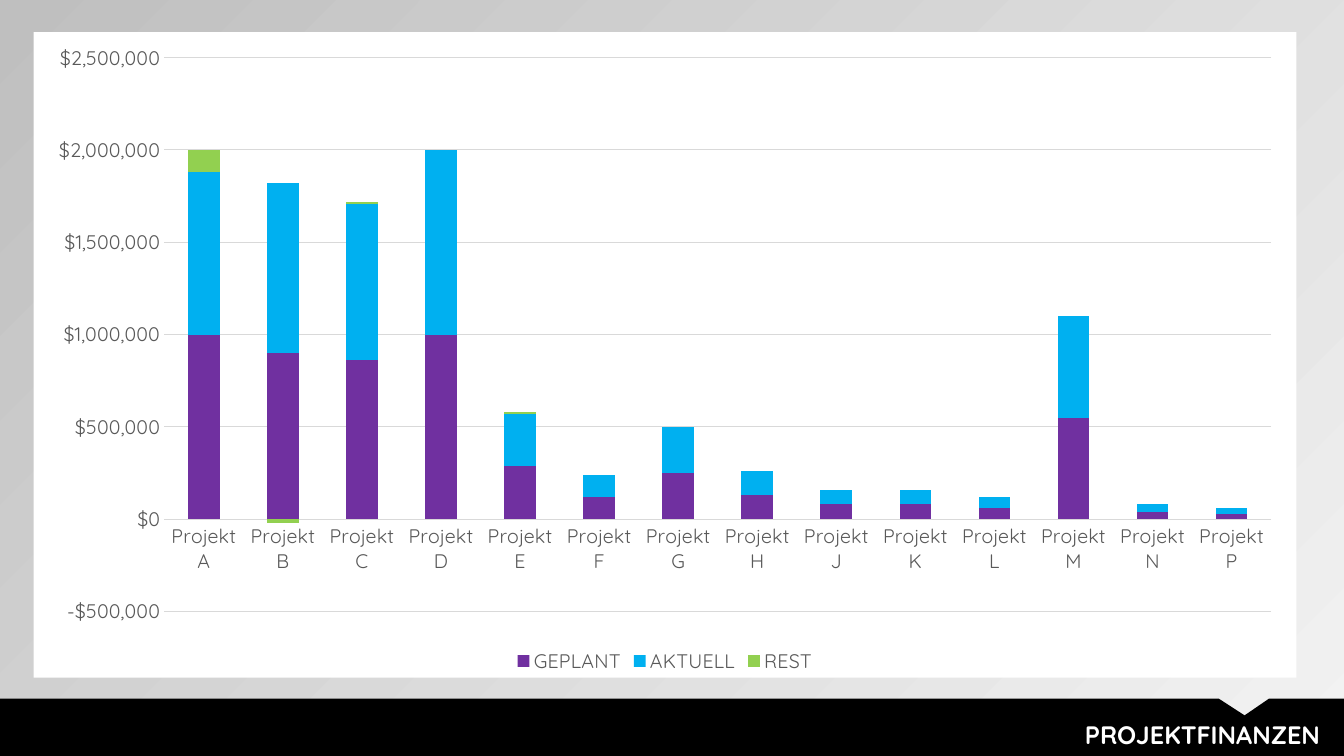
from lxml.etree import SubElement
from pptx import Presentation
from pptx.chart.data import CategoryChartData
from pptx.dml.color import RGBColor
from pptx.enum.chart import XL_CHART_TYPE as ChartType, XL_LEGEND_POSITION as LegendPos
from pptx.enum.chart import XL_TICK_MARK as TickMark
from pptx.enum.text import MSO_AUTO_SIZE as AutoSize, PP_ALIGN as Align
from pptx.oxml import parse_xml
from pptx.oxml.ns import nsdecls, qn
from pptx.util import Pt

FONT = "Quicksand"
WIDTH, HEIGHT = 960, 540
BAR_TOP = 499
GREY_TEXT, GREY_LINE = "595959", "D9D9D9"
PROJECTS = [f"Projekt {letter}" for letter in "ABCDEFGHJKLMNP"]
BUDGET = [
    ("GEPLANT", "7030A0", [1000000, 900000, 860000, 1000000, 290000, 120000, 250000,
                           130000, 80000, 80000, 60000, 550000, 40000, 30000]),
    ("AKTUELL", "00B0F0", [880000, 920000, 850000, 1000000, 280000, 120000, 250000,
                           130000, 80000, 80000, 60000, 550000, 40000, 30000]),
    ("REST", "92D050", [120000, -20000, 10000, 0, 10000] + [0] * 9),
]


def rgb(color):
    return RGBColor.from_string(color)


def set_fill(fill, color):
    fill.solid()
    fill.fore_color.rgb = rgb(color)


def set_font(font, size, color, bold=False):
    font.name, font.size, font.bold = FONT, Pt(size), bold
    font.color.rgb = rgb(color)


def set_line(line, color, width):
    line.color.rgb = rgb(color)
    line.width = Pt(width)


def set_background(s, start, end, angle):
    fill = s.background.fill
    fill.gradient()
    fill.gradient_angle = angle
    for stop, color in zip(fill.gradient_stops, (start, end)):
        stop.color.rgb = rgb(color)


def add_outline(s, points, color):
    corners = [(Pt(x), Pt(y)) for x, y in points]
    builder = s.shapes.build_freeform(*corners[0])
    builder.add_line_segments(corners[1:], close=True)
    sp = builder.convert_to_shape()
    sp.shadow.inherit = False
    set_fill(sp.fill, color)
    sp.line.fill.background()


def add_title(s, text, x, y, w, h):
    tf = s.shapes.add_textbox(Pt(x), Pt(y), Pt(w), Pt(h)).text_frame
    tf.word_wrap = True
    tf.auto_size = AutoSize.SHAPE_TO_FIT_TEXT
    p = tf.paragraphs[0]
    p.alignment = Align.RIGHT
    r = p.add_run()
    r.text = text
    set_font(r.font, 18, "FFFFFF", bold=True)


def style_axis(axis):
    axis.major_tick_mark = axis.minor_tick_mark = TickMark.NONE
    set_font(axis.tick_labels.font, 14, GREY_TEXT)


def fill_chart_area(chart, color):
    sp_pr = parse_xml(f"<c:spPr {nsdecls('c', 'a')}/>")
    fill = SubElement(sp_pr, qn("a:solidFill"))
    SubElement(fill, qn("a:srgbClr"), val=color)
    SubElement(SubElement(sp_pr, qn("a:ln")), qn("a:noFill"))
    chart._chartSpace.chart.addnext(sp_pr)


def add_budget_chart(s, x, y, w, h):
    data = CategoryChartData(number_format='"$"#,##0')
    data.categories = PROJECTS
    for name, _, values in BUDGET:
        data.add_series(name, values)
    chart = s.shapes.add_chart(ChartType.COLUMN_STACKED, Pt(x), Pt(y), Pt(w), Pt(h), data).chart
    set_font(chart.font, 14, "000000")
    fill_chart_area(chart, "FFFFFF")
    chart.has_title = False

    plot = chart.plots[0]
    plot.gap_width, plot.overlap, plot.vary_by_categories = 150, 100, False
    for series, (_, color, _) in zip(plot.series, BUDGET):
        series.invert_if_negative = False
        set_fill(series.format.fill, color)

    style_axis(chart.category_axis)
    set_line(chart.category_axis.format.line, GREY_LINE, 0.75)

    axis = chart.value_axis
    style_axis(axis)
    axis.minimum_scale, axis.maximum_scale, axis.major_unit = -500000, 2500000, 500000
    axis.tick_labels.number_format = '"$"#,##0'
    axis.tick_labels.number_format_is_linked = False
    axis.format.line.fill.background()
    set_line(axis.major_gridlines.format.line, GREY_LINE, 0.75)

    chart.has_legend = True
    chart.legend.position = LegendPos.BOTTOM
    chart.legend.include_in_layout = False
    set_font(chart.legend.font, 14, GREY_TEXT)


def main():
    prs = Presentation()
    prs.slide_width, prs.slide_height = Pt(WIDTH), Pt(HEIGHT)
    s = prs.slides.add_slide(prs.slide_layouts[6])
    set_background(s, "F2F2F2", "BFBFBF", 135)
    notch = [(870.5, BAR_TOP), (889, 511), (906.5, BAR_TOP)]
    footer = [(0, BAR_TOP), *notch, (WIDTH, BAR_TOP), (WIDTH, HEIGHT), (0, HEIGHT)]
    add_outline(s, footer, "000000")
    add_title(s, "PROJEKTFINANZEN", 298, 510, 652, 29)
    add_budget_chart(s, 24, 23, 902, 461)
    prs.save("out.pptx")


if __name__ == "__main__":
    main()
